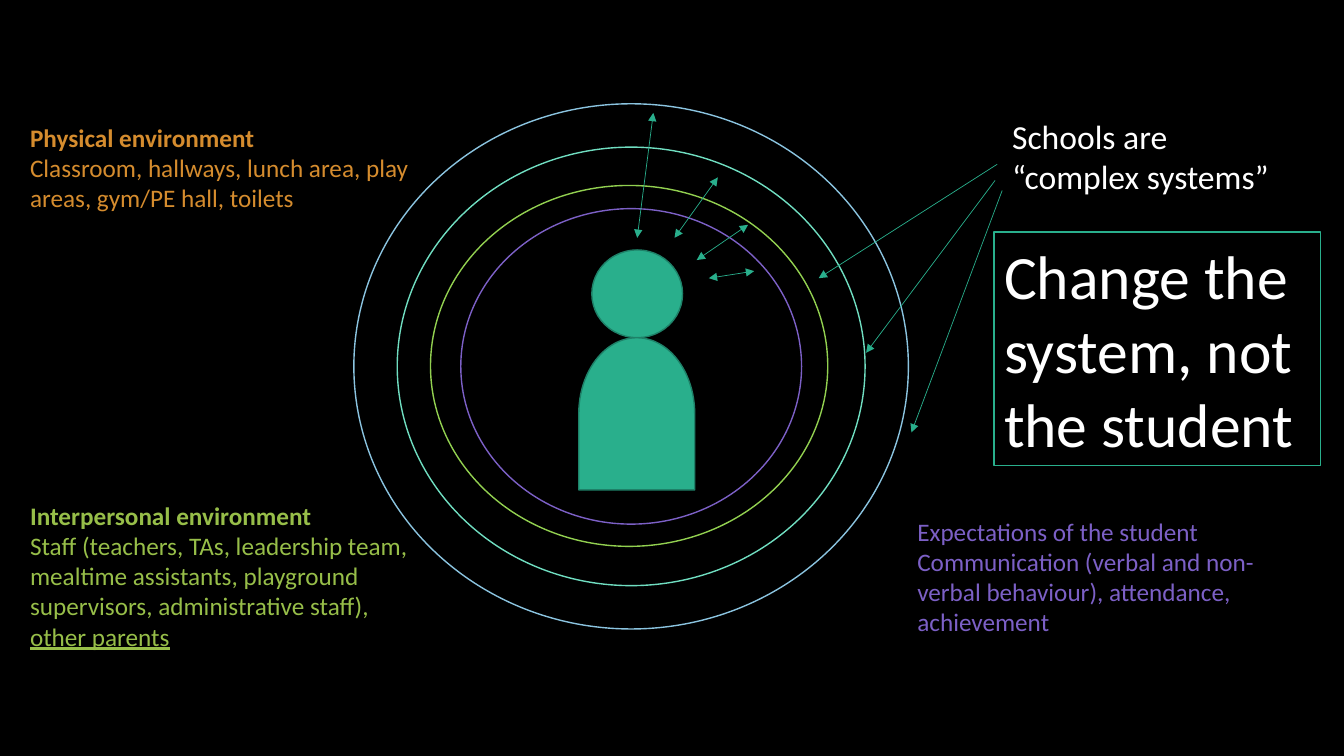
from lxml import etree
from pptx import Presentation
from pptx.dml.color import RGBColor
from pptx.enum.shapes import MSO_CONNECTOR, MSO_SHAPE as SHAPE
from pptx.enum.text import MSO_ANCHOR as ANCHOR, MSO_AUTO_SIZE as AUTO_SIZE, PP_ALIGN as ALIGN
from pptx.oxml.ns import qn
from pptx.util import Inches, Pt

BLACK = RGBColor(0x00, 0x00, 0x00)
WHITE = RGBColor(0xFF, 0xFF, 0xFF)
TEAL = RGBColor(0x29, 0xAF, 0x8C)
DARK_TEAL = RGBColor(0x1E, 0x81, 0x68)
MINT = RGBColor(0x70, 0xDE, 0xC1)
LIME = RGBColor(0x92, 0xD0, 0x50)
OLIVE = RGBColor(0x97, 0xBE, 0x49)
BLUE = RGBColor(0x8B, 0xC4, 0xE0)
PURPLE = RGBColor(0x7C, 0x60, 0xC6)
ORANGE = RGBColor(0xD5, 0x8C, 0x2E)
FONT = "Calibri"


def add_outline(slide, kind, box, line, fill=None):
    """Add a preset shape with a thin line and an optional fill."""
    shape = slide.shapes.add_shape(kind, *map(Inches, box))
    shape.shadow.inherit = False
    if fill is None:
        shape.fill.background()
    else:
        shape.fill.solid()
        shape.fill.fore_color.rgb = fill
    shape.line.color.rgb = line
    shape.line.width = Pt(1)
    return shape


def write_text(frame, paragraphs, *, size, color, anchor=ANCHOR.TOP):
    """Write paragraphs, each a list of (text, bold, underline) runs."""
    frame.word_wrap = True
    frame.auto_size = AUTO_SIZE.SHAPE_TO_FIT_TEXT
    frame.vertical_anchor = anchor
    for index, runs in enumerate(paragraphs):
        paragraph = frame.add_paragraph() if index else frame.paragraphs[0]
        paragraph.alignment = ALIGN.LEFT
        for text, bold, underline in runs:
            run = paragraph.add_run()
            run.text = text
            font = run.font
            font.name, font.size = FONT, Pt(size)
            font.bold, font.underline = bold, underline
            font.color.rgb = color


def add_note(slide, box, paragraphs, **text_format):
    """Add a text box that holds the given paragraphs."""
    note = slide.shapes.add_textbox(*map(Inches, box))
    write_text(note.text_frame, paragraphs, **text_format)


def add_arrow(slide, start, end, both_ways=False):
    """Add a thin arrow, with a head at one end or at both."""
    arrow = slide.shapes.add_connector(
        MSO_CONNECTOR.STRAIGHT, *map(Inches, (*start, *end)))
    arrow.line.color.rgb = TEAL
    arrow.line.width = Pt(0.5)
    for end_tag in ("a:headEnd", "a:tailEnd") if both_ways else ("a:tailEnd",):
        etree.SubElement(arrow.line._get_or_add_ln(), qn(end_tag), type="triangle")
    etree.SubElement(arrow._element.spPr, qn("a:effectLst"))


def add_student(slide, box):
    """Draw the student as a round head on an arched body."""
    left, top, width, height = box
    head_width, head_height = 0.9, 0.87
    add_outline(slide, SHAPE.OVAL, (left + 0.13, top, head_width, head_height),
                DARK_TEAL, TEAL)
    body_height = height - head_height
    turn_shift = (body_height - width) / 2
    body = add_outline(
        slide, SHAPE.FLOWCHART_DELAY,
        (left - turn_shift, top + head_height + turn_shift, body_height, width),
        DARK_TEAL, TEAL)
    body.rotation = 270


def add_environment_rings(slide, box):
    """Draw the nested rings and the two-way arrows that cross them."""
    left, top, width, height = box
    rings = [
        (0, 0, width, height, BLUE),
        (0.43, 0.43, 4.64, 4.35, MINT),
        (0.76, 0.81, 3.94, 3.58, LIME),
        (1.06, 1.04, 3.38, 3.13, PURPLE),
    ]
    for dx, dy, ring_width, ring_height, color in rings:
        add_outline(slide, SHAPE.OVAL,
                    (left + dx, top + dy, ring_width, ring_height), color)
    interactions = [
        ((2.97, 0.09), (2.81, 1.33)),
        ((3.61, 0.73), (3.18, 1.33)),
        ((3.91, 1.2), (3.4, 1.55)),
        ((3.97, 1.66), (3.52, 1.73)),
    ]
    for outer, inner in interactions:
        add_arrow(slide, (left + outer[0], top + outer[1]),
                  (left + inner[0], top + inner[1]), both_ways=True)


def add_system_message(slide, box):
    """Place the system statement, its arrows to the rings and the framed call."""
    left, top, width, height = box
    add_note(slide, (left + 0.08, top, 2.86, 1.31),
             [[("Schools are “complex systems”", False, False)]],
             size=24, color=WHITE)
    pointers = [
        ((0.03, 0.53), (-1.74, 1.66)),
        ((0.01, 0.69), (-1.27, 2.4)),
        ((0.08, 0.79), (-0.82, 3.19)),
    ]
    for start, end in pointers:
        add_arrow(slide, (left + start[0], top + start[1]),
                  (left + end[0], top + end[1]))
    call_height = 2.32
    call = add_outline(slide, SHAPE.RECTANGLE,
                       (left, top + height - call_height, width, call_height), TEAL)
    write_text(call.text_frame, [[("Change the system, not the student", False, False)]],
               size=44, color=WHITE, anchor=ANCHOR.MIDDLE)


def add_environment_notes(slide, box):
    """Place the three notes at the corners of the given box."""
    left, top, width, height = box
    note_width = 4.1
    add_note(slide, (left, top, note_width, 1.01), [
        [("Physical environment", True, False)],
        [("Classroom, hallways, lunch area, play areas, gym/PE hall, toilets",
          False, False)],
    ], size=18, color=ORANGE)
    staff_height = 1.62
    add_note(slide, (left, top + height - staff_height, note_width, staff_height), [
        [("Interpersonal environment", True, False)],
        [("Staff (teachers, TAs, leadership team, mealtime assistants, "
          "playground supervisors, administrative staff), ", False, False),
         ("other parents", False, True)],
    ], size=18, color=OLIVE)
    add_note(slide, (left + width - note_width, top + 3.91, note_width, 1.31), [
        [("Expectations of the student", False, False)],
        [("Communication (verbal and non-verbal behaviour), attendance, achievement",
          False, False)],
    ], size=18, color=PURPLE)


def main():
    """Build the slide and save it."""
    deck = Presentation()
    deck.slide_width, deck.slide_height = Inches(13.33), Inches(7.5)
    slide = deck.slides.add_slide(deck.slide_layouts[6])
    slide.background.fill.solid()
    slide.background.fill.fore_color.rgb = BLACK
    add_student(slide, (5.74, 2.48, 1.15, 2.38))
    add_environment_rings(slide, (3.51, 1.03, 5.5, 5.21))
    add_system_message(slide, (9.86, 1.1, 3.24, 3.52))
    add_environment_notes(slide, (0.2, 1.16, 12.9, 5.37))
    deck.save("out.pptx")


if __name__ == "__main__":
    main()
